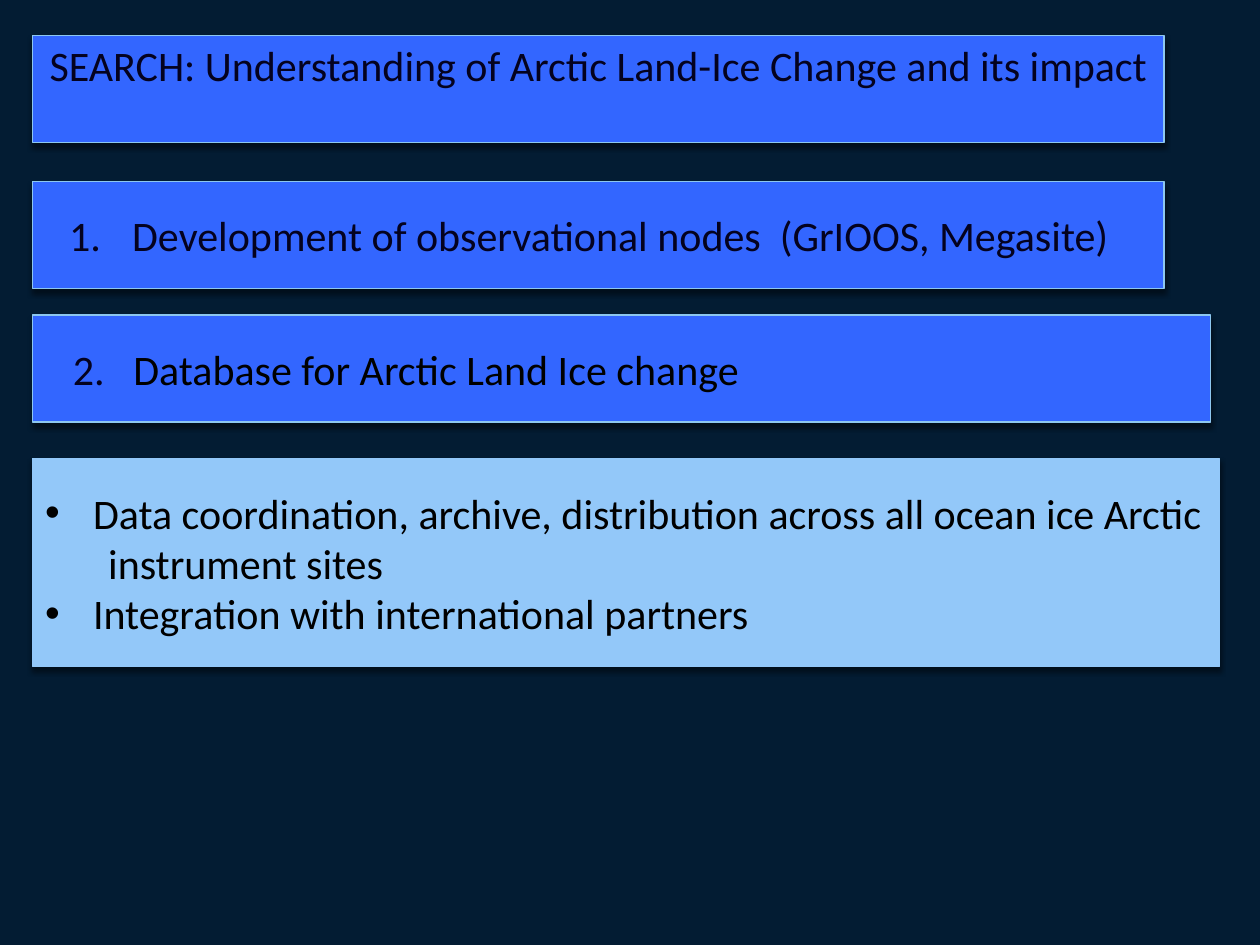
from lxml.etree import SubElement
from pptx import Presentation
from pptx.dml.color import RGBColor
from pptx.enum.shapes import MSO_SHAPE
from pptx.enum.text import MSO_ANCHOR, PP_ALIGN
from pptx.oxml.ns import qn
from pptx.util import Inches, Pt

COLORS = {
    "background": "031C33",
    "blue": "3366FF",
    "blue_edge": "8DC7F0",
    "light": "93C8F9",
    "navy": "04021F",
    "black": "000000",
}
LEFT = 0.26


def color(name):
    return RGBColor.from_string(COLORS[name])


def add_panel(top, width, height, fill, edge, lines, text_color):
    """Add a shadowed rectangle with one paragraph per line and return its text frame."""
    shape = slide.shapes.add_shape(
        MSO_SHAPE.RECTANGLE, Inches(LEFT), Inches(top), Inches(width), Inches(height))
    shape.fill.solid()
    shape.fill.fore_color.rgb = color(fill)
    shape.line.color.rgb = color(edge)
    shape.line.width = Pt(0.79)

    shape.shadow.inherit = False
    effects = shape._element.spPr.find(qn("a:effectLst"))
    shadow = SubElement(effects, qn("a:outerShdw"), blurRad=str(Pt(3)),
                        dist=str(Pt(2.4)), dir="5400000", rotWithShape="0")
    shade = SubElement(shadow, qn("a:srgbClr"), val=COLORS["black"])
    SubElement(shade, qn("a:alpha"), val="45000")

    frame = shape.text_frame
    frame.word_wrap = True
    frame.vertical_anchor = MSO_ANCHOR.MIDDLE
    for index, (text, indent, hanging, marker) in enumerate(lines):
        paragraph = frame.add_paragraph() if index else frame.paragraphs[0]
        paragraph.alignment = PP_ALIGN.LEFT
        paragraph.add_run().text = text
        properties = paragraph._p.get_or_add_pPr()
        properties.set("marL", str(Inches(indent)))
        properties.set("indent", str(-Inches(hanging)))
        if marker == "number":
            SubElement(properties, qn("a:buFont"), typeface="+mj-lt")
            SubElement(properties, qn("a:buAutoNum"), type="arabicPeriod")
        elif marker == "bullet":
            SubElement(properties, qn("a:buFont"), typeface="Arial")
            SubElement(properties, qn("a:buChar"), char="•")
        paragraph.font.name = "Calibri"
        paragraph.font.size = Pt(24)
        paragraph.font.color.rgb = color(text_color)
    return frame


presentation = Presentation()
presentation.slide_width = Inches(10)
presentation.slide_height = Inches(7.5)
slide = presentation.slides.add_slide(presentation.slide_layouts[6])
slide.background.fill.solid()
slide.background.fill.fore_color.rgb = color("background")

title = add_panel(
    0.28, 8.98, 0.85, "blue", "blue_edge",
    [("SEARCH: Understanding of Arctic Land-Ice Change and its impact", 0, 0, None)], "navy")
title.vertical_anchor = MSO_ANCHOR.TOP
title.margin_top = Inches(0.03)
title.paragraphs[0].alignment = PP_ALIGN.CENTER

nodes = add_panel(
    1.44, 8.98, 0.85, "blue", "blue_edge",
    [("Development of observational nodes  (GrIOOS, Megasite)", 0.5, 0.5, "number")], "navy")
nodes.margin_right = Inches(0.25)
nodes.paragraphs[0].alignment = PP_ALIGN.CENTER

add_panel(
    3.64, 9.42, 1.65, "light", "light",
    [("Data coordination, archive, distribution across all ocean ice Arctic \tinstrument sites",
      0.38, 0.38, "bullet"),
     ("Integration with international partners", 0.38, 0.38, "bullet")], "black")

database = add_panel(
    2.5, 9.35, 0.85, "blue", "blue_edge",
    [("2.\t", 0.7, 0.48, None)], "navy")
heading = database.paragraphs[0].add_run()
heading.text = "Database for Arctic Land Ice change"
heading.font.color.rgb = color("black")

presentation.save("out.pptx")
